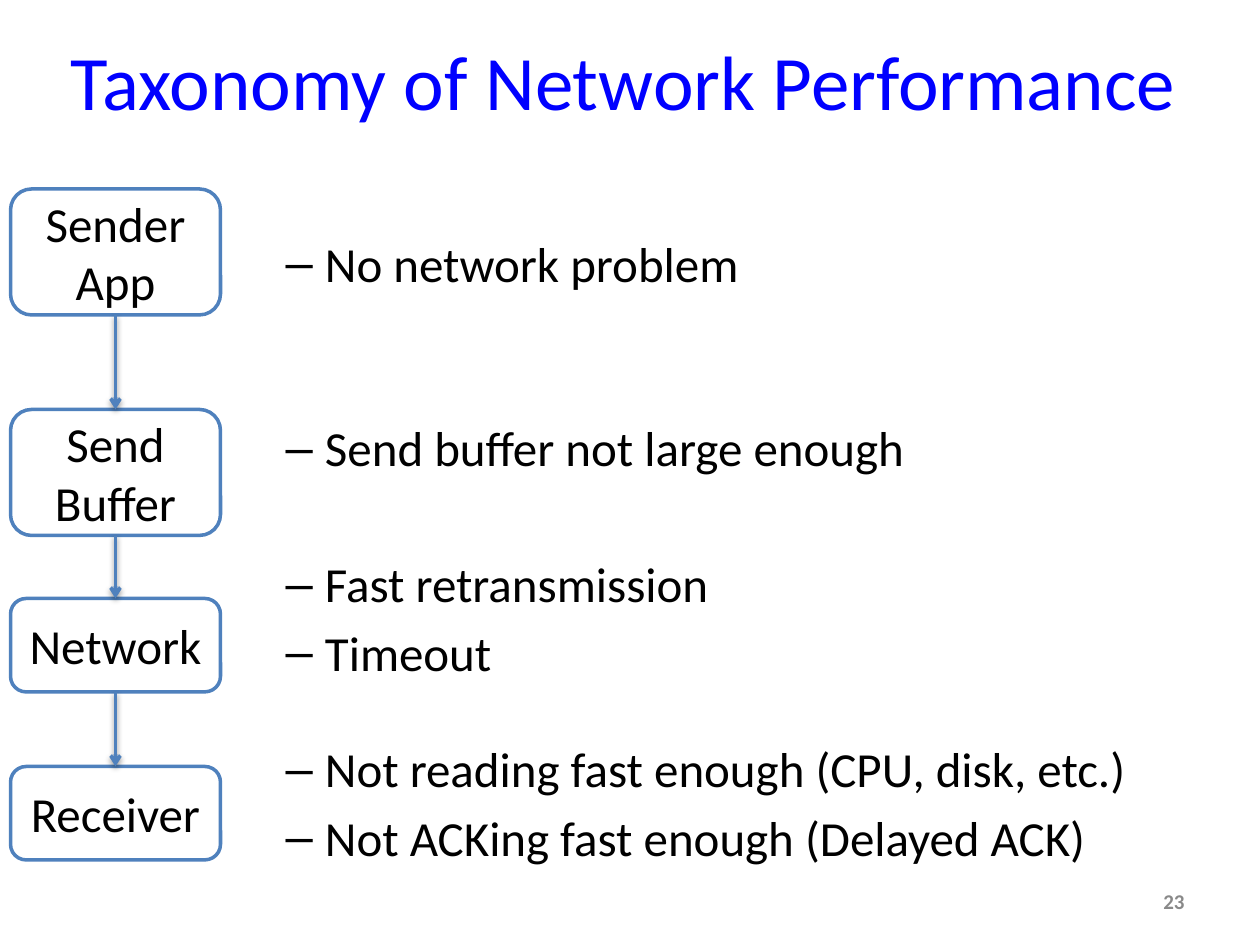
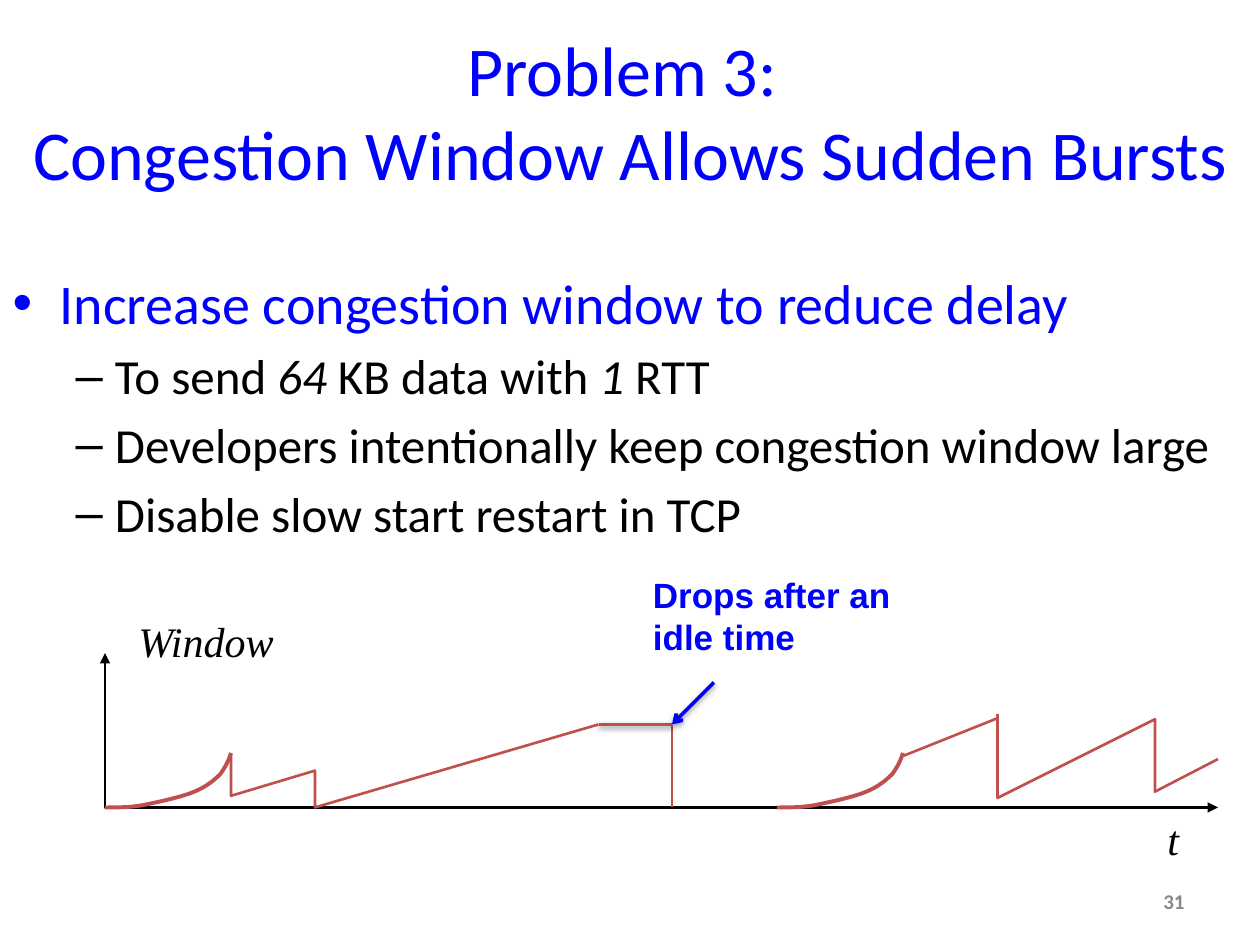
"""Build two slides on network performance and congestion windows."""
from lxml import etree
from pptx import Presentation
from pptx.dml.color import RGBColor
from pptx.enum.shapes import MSO_CONNECTOR, MSO_SHAPE
from pptx.enum.text import MSO_ANCHOR, MSO_AUTO_SIZE, PP_ALIGN
from pptx.oxml import parse_xml
from pptx.oxml.ns import nsdecls, qn
from pptx.util import Pt

PX = 7620
BLUE = RGBColor(0x00, 0x00, 0xFF)
BLACK = RGBColor(0x00, 0x00, 0x00)
WHITE = RGBColor(0xFF, 0xFF, 0xFF)
GREY = RGBColor(0x89, 0x89, 0x89)
STEEL = RGBColor(0x4F, 0x81, 0xBD)
RED = RGBColor(0xC0, 0x50, 0x4D)
CENTER, RIGHT = PP_ALIGN.CENTER, PP_ALIGN.RIGHT
MIDDLE = MSO_ANCHOR.MIDDLE
FIXED = MSO_AUTO_SIZE.NONE
ROUND = MSO_SHAPE.ROUNDED_RECTANGLE
STRAIGHT = MSO_CONNECTOR.STRAIGHT
SHADE = (
    f'<a:effectLst {nsdecls("a")}><a:outerShdw blurRad="40000" dist="20000" '
    'dir="5400000" rotWithShape="0"><a:srgbClr val="000000">'
    '<a:alpha val="38000"/></a:srgbClr></a:outerShdw></a:effectLst>'
)
BENDS = [
    [(120, 0), (118, 7), (115, 13), (110, 20)],
    [(110, 20), (104, 26), (97, 32), (85, 37)],
    [(85, 37), (73, 42), (54, 46), (40, 49)],
    [(40, 49), (26, 52), (13, 52), (0, 52)],
]


def emu(*vals):
    """Turn px lengths into EMU."""
    return [val * PX for val in vals]


def put(para, text, size=28, font="Calibri", color=BLACK, bold=False,
        slant=False, align=None):
    """Add formatted text to a paragraph, with \\v as a line break."""
    if align is not None:
        para.alignment = align
    for num, part in enumerate(text.split("\v")):
        if num:
            para.add_line_break()
        run = para.add_run()
        run.text = part
        face = run.font
        face.size, face.name, face.bold, face.italic = Pt(size), font, bold, slant
        face.color.rgb = color


def label(slide, box, text, wrap=True, anchor=None, **form):
    """Add a text box."""
    frame = slide.shapes.add_textbox(*emu(*box)).text_frame
    frame.word_wrap = wrap
    if anchor is not None:
        frame.vertical_anchor = anchor
    put(frame.paragraphs[0], text, **form)


def place(holder, box):
    """Move a placeholder and return its text frame."""
    holder.left, holder.top, holder.width, holder.height = emu(*box)
    frame = holder.text_frame
    frame.auto_size = FIXED
    return frame


def start(deck, box, title, size, page):
    """Add a slide with its title and page number."""
    slide = deck.slides.add_slide(deck.slide_layouts[1])
    frame = place(slide.shapes.title, box)
    frame.vertical_anchor = MIDDLE
    put(frame.paragraphs[0], title, size=size, color=BLUE, align=CENTER)
    label(slide, (860, 834, 280, 48), page, anchor=MIDDLE, size=12,
          color=GREY, bold=True, align=RIGHT)
    return slide


def items(slide, box, rows):
    """Fill the body with rows of level, space before and runs."""
    frame = place(slide.placeholders[1], box)
    for num, (level, gap, runs) in enumerate(rows):
        para = frame.add_paragraph() if num else frame.paragraphs[0]
        para.level = level
        if gap:
            para.space_before = Pt(gap)
        for text, form in runs:
            put(para, text, **form)


def stroke(shape, color, width, head=None, tail=None):
    """Set line colour, width and arrowheads."""
    shape.line.color.rgb = color
    shape.line.width = Pt(width)
    pen = shape._element.spPr.find(qn("a:ln"))
    for tag, kind in (("a:headEnd", head), ("a:tailEnd", tail)):
        if kind:
            etree.SubElement(pen, qn(tag), type=kind)


def link(slide, ends, color, width, shade=False, tail=None):
    """Add a straight connector between two points."""
    line = slide.shapes.add_connector(STRAIGHT, *emu(*ends))
    stroke(line, color, width, tail=tail)
    blank = f'<a:effectLst {nsdecls("a")}/>'
    line._element.spPr.append(parse_xml(SHADE if shade else blank))
    return line


def trace(slide, spot, dots, color=RED, width=1.5, **ends):
    """Draw an open outline through dots relative to a spot."""
    left, top = spot
    dots = [(round((left + x) * PX), round((top + y) * PX)) for x, y in dots]
    pen = slide.shapes.build_freeform(*dots[0])
    pen.add_line_segments(dots[1:], close=False)
    shape = pen.convert_to_shape()
    shape.fill.background()
    shape.shadow.inherit = False
    stroke(shape, color, width, **ends)


def curve(steps=8):
    """Return the dots of the slow start curve."""
    dots = [BENDS[0][0]]
    for bend in BENDS:
        for step in range(1, steps + 1):
            t = step / steps
            mix = ((1 - t) ** 3, 3 * t * (1 - t) ** 2, 3 * t * t * (1 - t), t ** 3)
            dots.append(tuple(sum(m * p[axis] for m, p in zip(mix, bend))
                              for axis in (0, 1)))
    return dots


def chain(slide, box):
    """Stack the stages of the data path and join them with arrows."""
    left, top, wide = box
    last = None
    for text, down, high in (("Sender App", 0, 120), ("Send Buffer", 210, 120),
                             ("Network", 390, 89), ("Receiver", 550, 89)):
        stage = slide.shapes.add_shape(ROUND, *emu(left, top + down, wide, high))
        stage.shadow.inherit = False
        stage.fill.solid()
        stage.fill.fore_color.rgb = WHITE
        stroke(stage, STEEL, 2)
        stage.text_frame.vertical_anchor = MIDDLE
        stage.text_frame.word_wrap = True
        put(stage.text_frame.paragraphs[0], text, align=CENTER)
        if last:
            arrow = link(slide, (0, 0, 0, 0), STEEL, 2, shade=True, tail="arrow")
            arrow.begin_connect(last, 2)
            arrow.end_connect(stage, 0)
        last = stage


def graph(slide, box):
    """Sketch the window size over time."""
    left, top, wide, high = box
    spot = (left, top)
    trace(slide, spot, [(0, 0), (0, high), (wide, high)], color=BLACK,
          head="triangle", tail="triangle")
    form = {"size": 24, "font": "Times New Roman", "slant": True}
    label(slide, (left + 1000, top + high, 49, 60), "t", wrap=False, **form)
    label(slide, (left + 20, top - 42, 168, 60), "Window", wrap=False, **form)
    trace(slide, spot, [(120, 96), (120, 136), (200, 112), (200, high), (470, 68)])
    trace(slide, spot, [(850, 58), (850, 138), (1000, 63), (1000, 132), (wide, 101)])
    for shift in (0, 640):
        trace(slide, (left + shift, top + high - 52), curve(), width=2.25)
    for ends, color, width, shade, tail in (
            ((760, 98, 850, 62), RED, 1.5, False, None),
            ((540, 68, 540, high), RED, 1.5, False, None),
            ((470, 68, 540, 68), RED, 2, True, None),
            ((580, 28, 540, 68), BLUE, 2, True, "arrow")):
        x1, y1, x2, y2 = ends
        link(slide, (left + x1, top + y1, left + x2, top + y2),
             color, width, shade, tail)
    label(slide, (left + 510, top - 82, 280, 92), "Drops after an idle time",
          size=20, font="Arial", color=BLUE, bold=True)


def causes(deck):
    """Build the taxonomy slide."""
    slide = start(deck, (4, 1, 1180, 150), "Taxonomy of Network Performance",
                  44, "23")
    rows = (("No network problem", 0), ("Send buffer not large enough", 72),
            ("Fast retransmission", 44), ("Timeout", 0),
            ("Not reading fast enough (CPU, disk, etc.)", 33),
            ("Not ACKing fast enough (Delayed ACK)", 0))
    items(slide, (200, 216, 1180, 594),
          [(1, gap, [(text, {})]) for text, gap in rows])
    chain(slide, (10, 180, 200))


def bursts(deck):
    """Build the congestion window slide."""
    slide = start(deck, (0, 30, 1200, 150),
                  "Problem 3: \vCongestion Window Allows Sudden Bursts", 40, "31")
    slant = {"slant": True}
    items(slide, (0, 250, 1200, 594), [
        (0, 0, [("Increase congestion window to reduce delay",
                 {"size": 32, "color": BLUE})]),
        (1, 0, [("To send ", {}), ("64", slant), (" KB data with ", {}),
                ("1", slant), (" RTT", {})]),
        (1, 0, [("Developers intentionally keep congestion window large", {})]),
        (1, 0, [("Disable slow start restart in TCP", {})]),
    ])
    graph(slide, (100, 622, 1060, 147))


def main():
    """Build and save the deck."""
    deck = Presentation()
    deck.slide_width, deck.slide_height = emu(1200, 900)
    causes(deck)
    bursts(deck)
    deck.save("out.pptx")


if __name__ == "__main__":
    main()
